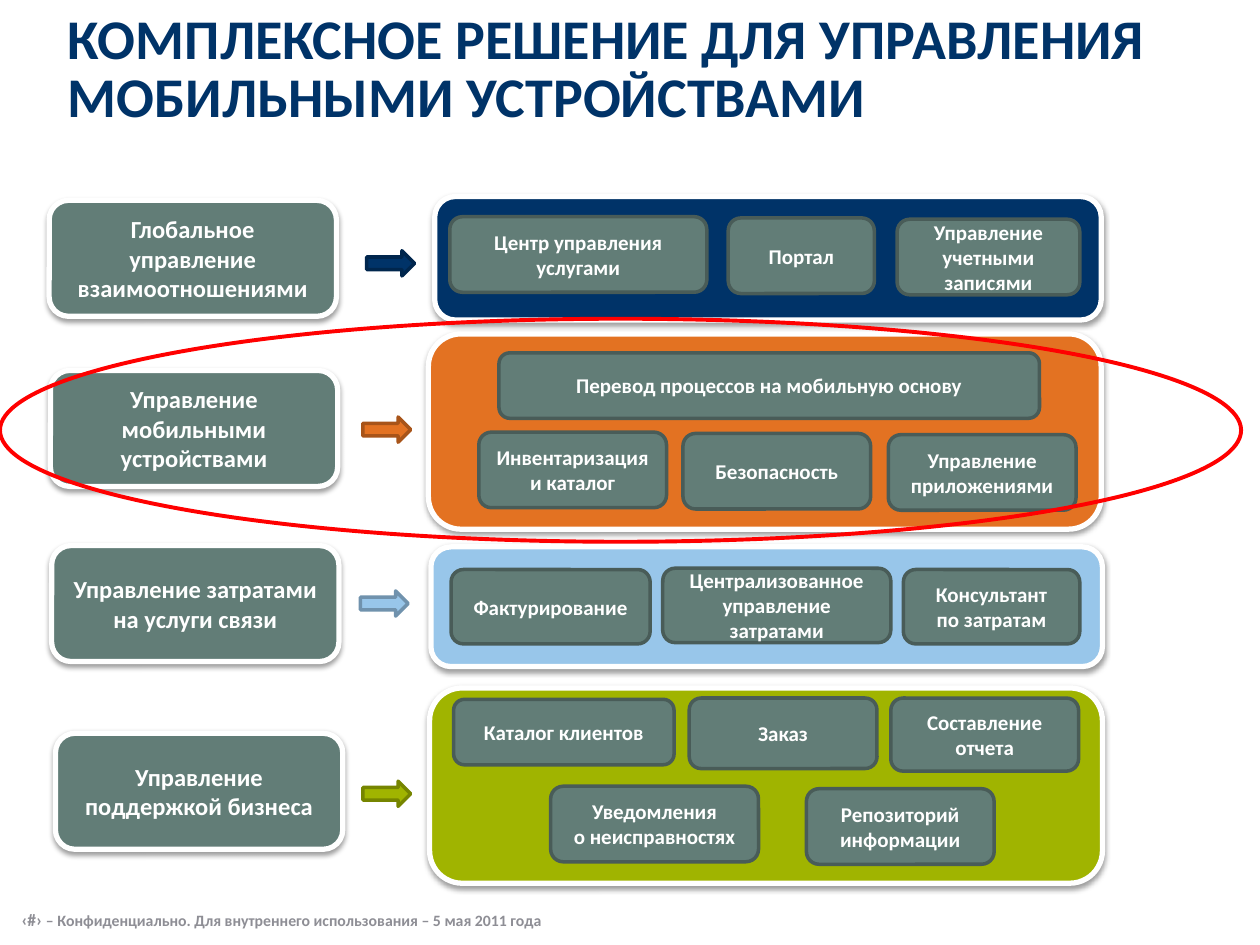
from lxml import etree
from pptx import Presentation
from pptx.dml.color import RGBColor
from pptx.enum.shapes import MSO_SHAPE
from pptx.enum.text import MSO_ANCHOR, PP_ALIGN
from pptx.oxml.ns import qn
from pptx.util import Inches, Pt

ROUND, ARROW, OVAL = MSO_SHAPE.ROUNDED_RECTANGLE, MSO_SHAPE.RIGHT_ARROW, MSO_SHAPE.OVAL
MIDDLE, CENTER = MSO_ANCHOR.MIDDLE, PP_ALIGN.CENTER
FONT = "Calibri"
COLS, ROWS = 100, 75
WIDTH, HEIGHT = Inches(10), Inches(7.5)
COLORS = {
    "navy": "003368", "navy_edge": "00264D",
    "orange": "E37222", "orange_edge": "A85419",
    "sky": "98C6EA", "sky_edge": "7092AD",
    "green": "A0B400", "green_edge": "768500",
    "box": "627D77", "box_edge": "495C58",
    "white": "FFFFFF", "black": "000000", "footer": "8E8E95", "red": "FF0000",
}
LABEL_SIZE = (22.8, 9.2)
ARROW_SIZE = (3.8, 2)

TITLE = "КОМПЛЕКСНОЕ РЕШЕНИЕ ДЛЯ УПРАВЛЕНИЯ МОБИЛЬНЫМИ УСТРОЙСТВАМИ"
FOOTER = [("‹#› ", 10), ("– Конфиденциально. Для внутреннего использования – 5 мая 2011 года", 9)]

# color, label, label position, arrow position, panel area, boxes
BANDS = [
    ("navy", "Глобальное управление взаимоотношениями", (3.9, 15.9), (29.1, 19.9),
     (34.5, 15.6, 52.9, 9.8), [
         ("Центр управления услугами", (35.7, 17.2, 20.4, 6)),
         ("Портал", (57.8, 17.3, 11.6, 6)),
         ("Управление\vучетными записями", (71.2, 17.4, 14.5, 6))]),
    ("orange", "Управление мобильными устройствами", (4, 29.4), (28.8, 33.1),
     (34, 26.5, 53.4, 15.5), [
         ("Перевод процессов на мобильную основу", (39.6, 28, 42.9, 5.2)),
         ("Инвентаризация и каталог", (38, 34.3, 14.9, 6)),
         ("Безопасность", (54.2, 34.4, 14.9, 6)),
         ("Управление\vприложениями", (70.5, 34.5, 14.9, 6))]),
    ("sky", "Управление затратами на услуги связи", (4.1, 43.3), (28.6, 46.9),
     (34.2, 43.4, 53.3, 9.5), [
         ("Фактурирование", (35.8, 45.2, 15.8, 5.9)),
         ("Централизованное управление\vзатратами", (52.6, 45.1, 18.1, 5.9)),
         ("Консультант\vпо затратам", (71.7, 45.2, 14, 5.9))]),
    ("green", "Управление поддержкой бизнеса", (4.4, 58.2), (28.8, 62),
     (34.1, 54.6, 53.4, 15.5), [
         ("Каталог клиентов", (36, 55.5, 17.5, 5.2)),
         ("Заказ", (54.7, 55.4, 14.9, 5.6)),
         ("Составление отчета", (70.7, 55.4, 14.9, 5.8)),
         ("Уведомления\vо неисправностях", (43.7, 62.4, 16.5, 6)),
         ("Репозиторий информации", (64, 62.6, 14.9, 6))]),
]


def rgb(name):
    """Return the palette colour with this name."""
    return RGBColor.from_string(COLORS[name])


def place(area):
    """Turn grid columns and rows into slide lengths."""
    x, y, w, h = area
    return (int(WIDTH * x / COLS), int(HEIGHT * y / ROWS),
            int(WIDTH * w / COLS), int(HEIGHT * h / ROWS))


def style_run(r, size, color):
    """Format a run as bold text."""
    r.font.name, r.font.size, r.font.bold = FONT, Pt(size), True
    r.font.color.rgb = rgb(color)


def add_shadow(sp):
    """Give a shape a soft shadow that falls straight down."""
    effects = sp._element.spPr.find(qn("a:effectLst"))
    shadow = etree.SubElement(effects, qn("a:outerShdw"), blurRad=str(Pt(3.1)),
                              dist=str(Pt(1.6)), dir="5400000", rotWithShape="0")
    color = etree.SubElement(shadow, qn("a:srgbClr"), val=COLORS["black"])
    etree.SubElement(color, qn("a:alpha"), val="38000")


def add_figure(s, kind, area, fill, line, weight):
    """Add a preset shape, unfilled when fill is None."""
    sp = s.shapes.add_shape(kind, *place(area))
    sp.shadow.inherit = False
    if fill:
        sp.fill.solid()
        sp.fill.fore_color.rgb = rgb(fill)
    else:
        sp.fill.background()
    sp.line.color.rgb = rgb(line)
    sp.line.width = Pt(weight)
    return sp


def set_caption(sp, text, size):
    """Write centred white text in a shape."""
    tf = sp.text_frame
    tf.word_wrap, tf.vertical_anchor = True, MIDDLE
    tf.text = text
    for p in tf.paragraphs:
        p.alignment = CENTER
        for r in p.runs:
            style_run(r, size, "white")


def add_text(s, area, parts, color, top=0, left=0):
    """Add a one-paragraph text box from (text, size) parts."""
    tf = s.shapes.add_textbox(*place(area)).text_frame
    tf.word_wrap, tf.vertical_anchor = True, MIDDLE
    tf.margin_left, tf.margin_top = Inches(left), Inches(top)
    tf.margin_right, tf.margin_bottom = Inches(0.1), 0
    p = tf.paragraphs[0]
    for text, size in parts:
        r = p.add_run()
        r.text = text
        style_run(r, size, color)
    return p


def add_band(s, color, label, label_at, arrow_at, panel, boxes):
    """Add a label, its arrow and the panel of boxes it points to."""
    add_shadow(add_figure(s, ROUND, panel, color, "white", 3))
    for text, area in boxes:
        set_caption(add_figure(s, ROUND, area, "box", "box_edge", 2), text, 12)
    sp = add_figure(s, ROUND, label_at + LABEL_SIZE, "box", "white", 3)
    add_shadow(sp)
    set_caption(sp, label, 14)
    add_figure(s, ARROW, arrow_at + ARROW_SIZE, color, color + "_edge", 2)


def main():
    """Build the slide and save it."""
    prs = Presentation()
    prs.slide_width, prs.slide_height = WIDTH, HEIGHT
    s = prs.slides.add_slide(prs.slide_layouts[6])
    add_text(s, (1.7, 71.3, 43.4, 3.4), FOOTER, "footer")
    title = add_text(s, (4.4, 0.5, 95.6, 9.8), [(TITLE, 32)], "navy", top=0.05, left=0.1)
    title.line_spacing = Pt(33)
    for band in BANDS:
        add_band(s, *band)
    add_figure(s, OVAL, (0, 25.3, 98.5, 17.7), None, "red", 2.25)
    prs.save("out.pptx")


if __name__ == "__main__":
    main()
